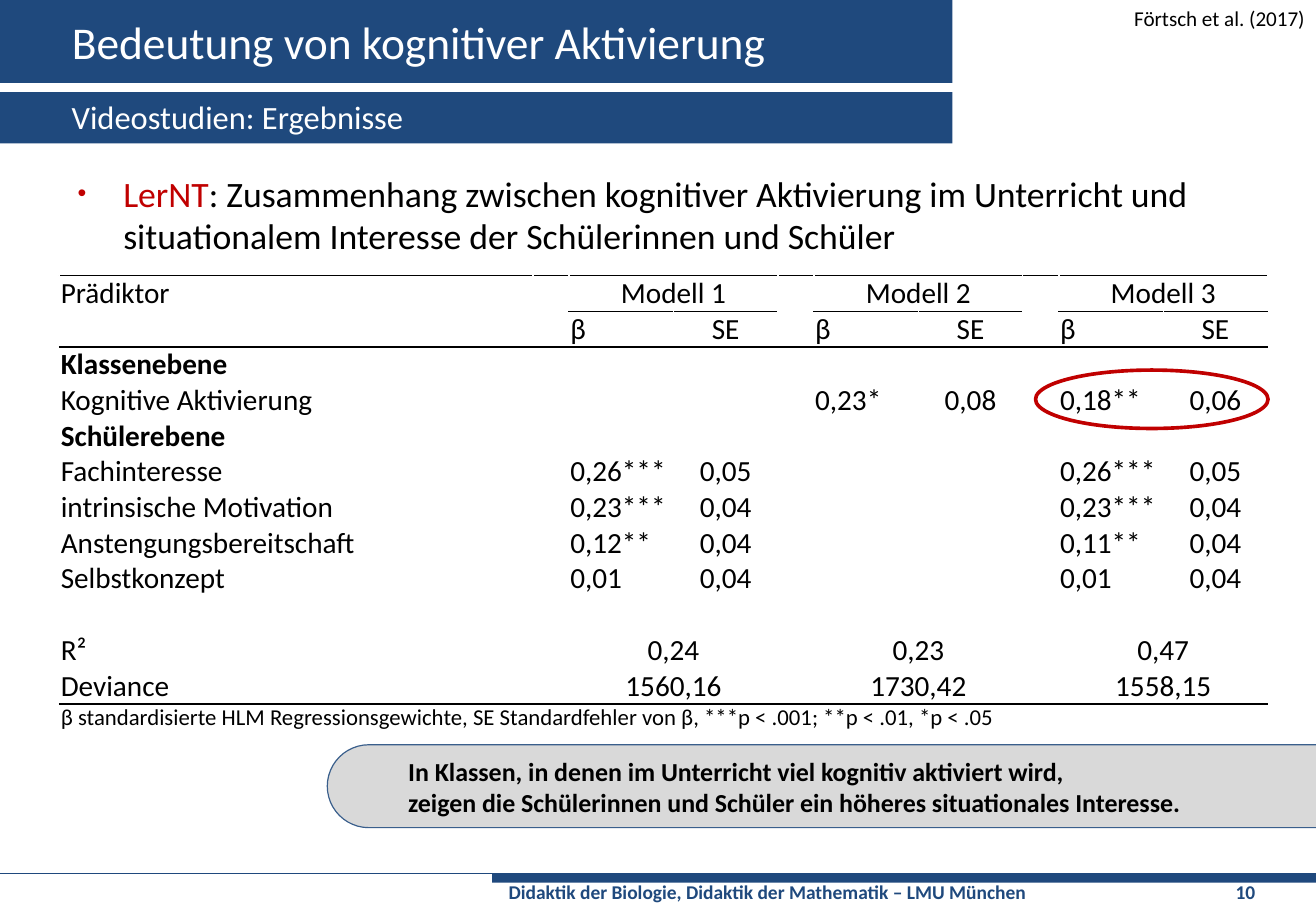
from dataclasses import dataclass
from typing import NamedTuple

from lxml.etree import SubElement
from pptx import Presentation
from pptx.dml.color import RGBColor
from pptx.enum.shapes import MSO_CONNECTOR, MSO_SHAPE
from pptx.enum.text import MSO_ANCHOR, MSO_AUTO_SIZE, PP_ALIGN
from pptx.oxml.ns import qn
from pptx.util import Inches, Pt

SLIDE_WIDTH = Pt(810.75)
SLIDE_HEIGHT = Pt(567)


@dataclass(frozen=True)
class Theme:
    font: str = "Calibri"
    blue: str = "1F497D"
    outline: str = "3A5F8C"
    red: str = "C00000"
    grey: str = "D9D9D9"
    black: str = "000000"
    white: str = "FFFFFF"
    title: int = 28
    lead: int = 22
    subtitle: int = 20
    table: int = 18
    callout: int = 16
    note: int = 14
    citation: int = 13
    footer: int = 12


THEME = Theme()


class Area(NamedTuple):
    """Left, top, width and height in percent of the slide."""
    left: float
    top: float
    width: float
    height: float

    def lengths(self) -> tuple:
        return (across(self.left), down(self.top), across(self.width), down(self.height))


class Block(NamedTuple):
    shape: int
    area: Area
    fill: str | None = None
    line: str | None = None
    weight: float = 0


class Predictor(NamedTuple):
    """One table row; each model holds a (β, SE) pair, a single fit value or nothing."""
    name: str
    models: tuple = ((), (), ())
    bold: bool = False


FOOTER_BAR = Area(37.39, 94.94, 62.61, 1.02)
TABLE_AREA = Area(4.53, 29.95, 91.83, 49.5)
LABEL_WIDTH, GAP_WIDTH, VALUE_WIDTH = 35.97, 2.75, 7.93
ROW_HEIGHT, NOTE_HEIGHT = 3.88, 3.05
MODEL_COLUMNS = (2, 5, 8)

BANDS = (
    Block(MSO_SHAPE.RECTANGLE, Area(0, 0, 72.38, 9.01), THEME.blue),
    Block(MSO_SHAPE.RECTANGLE, FOOTER_BAR, THEME.blue),
    Block(MSO_SHAPE.RECTANGLE, Area(0, 10.03, 72.38, 5.58), THEME.blue),
)
HIGHLIGHT = Block(MSO_SHAPE.OVAL, Area(78.69, 40.23, 17.67, 6.35), None, THEME.red, 2.25)
CALLOUT = Block(MSO_SHAPE.ROUNDED_RECTANGLE, Area(24.87, 80.96, 80.91, 9.01),
                THEME.grey, THEME.outline, 0.75)

PREDICTORS = (
    Predictor("Prädiktor", (("Modell 1",), ("Modell 2",), ("Modell 3",))),
    Predictor("", (("β", "SE"),) * 3),
    Predictor("Klassenebene", bold=True),
    Predictor("Kognitive Aktivierung", ((), ("0,23*", "0,08"), ("0,18**", "0,06"))),
    Predictor("Schülerebene", bold=True),
    Predictor("Fachinteresse", (("0,26***", "0,05"), (), ("0,26***", "0,05"))),
    Predictor("intrinsische Motivation", (("0,23***", "0,04"), (), ("0,23***", "0,04"))),
    Predictor("Anstengungsbereitschaft", (("0,12**", "0,04"), (), ("0,11**", "0,04"))),
    Predictor("Selbstkonzept", (("0,01", "0,04"), (), ("0,01", "0,04"))),
    Predictor(""),
    Predictor("R²", (("0,24",), ("0,23",), ("0,47",))),
    Predictor("Deviance", (("1560,16",), ("1730,42",), ("1558,15",))),
)
NOTE = ("β standardisierte HLM Regressionsgewichte, SE Standardfehler von β, "
        "***p < .001; **p < .01, *p < .05")


def across(percent: float) -> int:
    return round(SLIDE_WIDTH * percent / 100)


def down(percent: float) -> int:
    return round(SLIDE_HEIGHT * percent / 100)


def write(paragraph, text: str, *, size: int, color: str = THEME.black,
          bold: bool = False, align=PP_ALIGN.LEFT) -> None:
    paragraph.alignment = align
    for index, part in enumerate(text.split("\v")):
        if index:
            paragraph.add_line_break()
        run = paragraph.add_run()
        run.text = part
        run.font.name, run.font.size, run.font.bold = THEME.font, Pt(size), bold
        run.font.color.rgb = RGBColor.from_string(color)


def add_block(slide, block: Block):
    shape = slide.shapes.add_shape(block.shape, *block.area.lengths())
    shape.shadow.inherit = False
    if block.fill:
        shape.fill.solid()
        shape.fill.fore_color.rgb = RGBColor.from_string(block.fill)
    else:
        shape.fill.background()
    if block.line:
        shape.line.color.rgb = RGBColor.from_string(block.line)
        shape.line.width = Pt(block.weight)
    else:
        shape.line.fill.background()
    return shape


def add_text(slide, area: Area, text: str, **style):
    frame = slide.shapes.add_textbox(*area.lengths()).text_frame
    frame.word_wrap = True
    write(frame.paragraphs[0], text, **style)
    return frame.paragraphs[0]


def add_footer(slide, text: str) -> None:
    level = down(FOOTER_BAR.top)
    line = slide.shapes.add_connector(MSO_CONNECTOR.STRAIGHT, 0, level, SLIDE_WIDTH, level)
    line.line.color.rgb = RGBColor.from_string(THEME.blue)
    line.line.width = Pt(1)
    SubElement(line.element.spPr, qn("a:effectLst"))
    paragraph = add_text(slide, Area(37.78, 95.08, 62.22, 3.93), text,
                         size=THEME.footer, color=THEME.blue, bold=True)
    stops = SubElement(paragraph._p.get_or_add_pPr(), qn("a:tabLst"))
    SubElement(stops, qn("a:tab"), pos=str(int(Inches(6.22))), algn="l")


def add_bullet(paragraph, color: str) -> None:
    properties = paragraph._p.get_or_add_pPr()
    properties.set("marL", str(int(Inches(0.39))))
    properties.set("indent", str(-int(Inches(0.39))))
    SubElement(SubElement(properties, qn("a:buClr")), qn("a:srgbClr"), val=color)
    SubElement(properties, qn("a:buSzPct"), val="70000")
    SubElement(properties, qn("a:buFont"), typeface="Arial")
    SubElement(properties, qn("a:buChar"), char="•")


def is_ruled(row: int, column: int) -> bool:
    """Tell whether a black rule runs along the bottom of this cell (row -1: table top)."""
    under_model = column >= MODEL_COLUMNS[0] and column % 3 != 1
    return row in (-1, 1, len(PREDICTORS) - 1) or (row == 0 and under_model)


def format_cell(cell, row: int, column: int) -> None:
    cell.margin_left = cell.margin_right = Inches(0.01)
    cell.margin_top = cell.margin_bottom = 0
    cell.vertical_anchor = MSO_ANCHOR.BOTTOM
    rules = {"L": False, "R": False, "T": is_ruled(row - 1, column), "B": is_ruled(row, column)}
    for side, ruled in rules.items():
        border = SubElement(cell._tc.get_or_add_tcPr(), qn(f"a:ln{side}"), w=str(int(Pt(1))))
        fill = SubElement(border, qn("a:solidFill"))
        SubElement(fill, qn("a:srgbClr"), val=THEME.black if ruled else THEME.white)
    cell.fill.background()


def add_predictor_table(slide) -> None:
    widths = [LABEL_WIDTH] + [GAP_WIDTH, VALUE_WIDTH, VALUE_WIDTH] * len(MODEL_COLUMNS)
    heights = [ROW_HEIGHT] * len(PREDICTORS) + [NOTE_HEIGHT]
    table = slide.shapes.add_table(len(heights), len(widths), *TABLE_AREA.lengths()).table
    table.first_row = table.horz_banding = False
    for column, width in zip(table.columns, widths):
        column.width = across(width)
    for row, height in zip(table.rows, heights):
        row.height = down(height)
    for row in range(len(heights)):
        for column in range(len(widths)):
            format_cell(table.cell(row, column), row, column)

    def fill_cell(row: int, column: int, text: str, size: int = THEME.table, **style) -> None:
        if text:
            write(table.cell(row, column).text_frame.paragraphs[0], text, size=size, **style)

    for row, predictor in enumerate(PREDICTORS):
        fill_cell(row, 0, predictor.name, bold=predictor.bold)
        for column, values in zip(MODEL_COLUMNS, predictor.models):
            if len(values) == 1:
                table.cell(row, column).merge(table.cell(row, column + 1))
                fill_cell(row, column, values[0], align=PP_ALIGN.CENTER)
            elif values:
                fill_cell(row, column, values[0])
                fill_cell(row, column + 1, values[1], align=PP_ALIGN.CENTER)
    last = len(PREDICTORS)
    table.cell(last, 0).merge(table.cell(last, len(widths) - 1))
    fill_cell(last, 0, NOTE, size=THEME.note)


def place_title(slide, text: str) -> None:
    title = slide.shapes.title
    title.left, title.top, title.width, title.height = Area(4.57, 0, 67.14, 9.01).lengths()
    title.text_frame.auto_size = MSO_AUTO_SIZE.NONE
    title.text_frame.vertical_anchor = MSO_ANCHOR.MIDDLE
    write(title.text_frame.paragraphs[0], text, size=THEME.title, color=THEME.white)
    title.element.getparent().append(title.element)  # in front of its band


def add_callout(slide, text: str) -> None:
    callout = add_block(slide, CALLOUT)
    callout.adjustments[0] = 0.5
    callout.text_frame.vertical_anchor = MSO_ANCHOR.MIDDLE
    paragraph = callout.text_frame.paragraphs[0]
    write(paragraph, text, size=THEME.callout, bold=True)
    paragraph._p.get_or_add_pPr().set("marL", str(int(Inches(0.49))))


def main() -> None:
    presentation = Presentation()
    presentation.slide_width = SLIDE_WIDTH
    presentation.slide_height = SLIDE_HEIGHT
    presentation.element.sldSz.attrib.pop("type", None)
    slide = presentation.slides.add_slide(presentation.slide_layouts.get_by_name("Title Only"))
    for band in BANDS:
        add_block(slide, band)
    add_footer(slide, "Didaktik der Biologie, Didaktik der Mathematik – LMU München\t10")
    add_predictor_table(slide)
    lead = add_text(slide, Area(5.03, 18.02, 90.05, 10.79), "LerNT",
                    size=THEME.lead, color=THEME.red)
    write(lead, ": Zusammenhang zwischen kognitiver Aktivierung im Unterricht und "
          "situationalem Interesse der Schülerinnen und Schüler", size=THEME.lead)
    add_bullet(lead, THEME.red)
    place_title(slide, "Bedeutung von kognitiver Aktivierung")
    add_text(slide, Area(4.57, 9.98, 67.14, 5.58), "Videostudien: Ergebnisse",
             size=THEME.subtitle, color=THEME.white)
    add_block(slide, HIGHLIGHT)
    add_callout(slide, "In Klassen, in denen im Unterricht viel kognitiv aktiviert wird,\v"
                "zeigen die Schülerinnen und Schüler ein höheres situationales Interesse.")
    add_text(slide, Area(72.38, 0, 27.62, 7.74), "Förtsch et al. (2017)",
             size=THEME.citation, align=PP_ALIGN.RIGHT)
    presentation.save("out.pptx")


if __name__ == "__main__":
    main()
